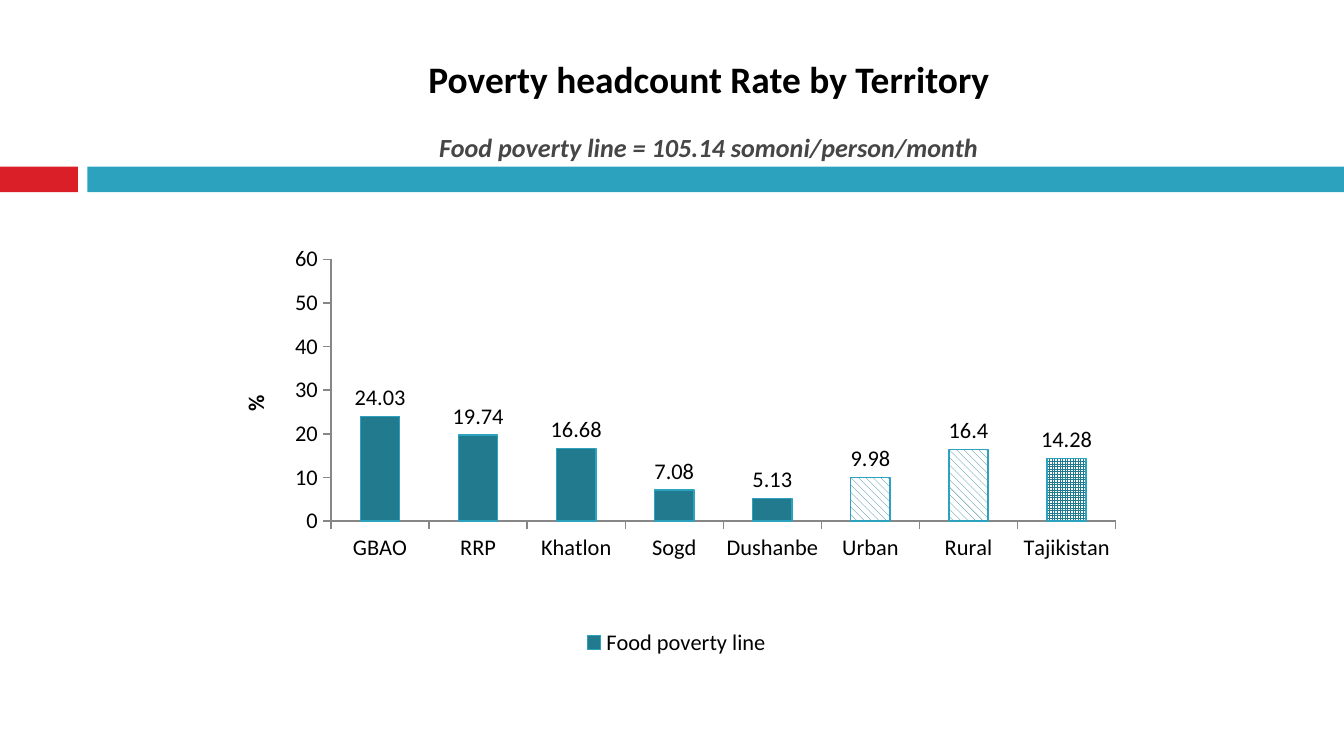
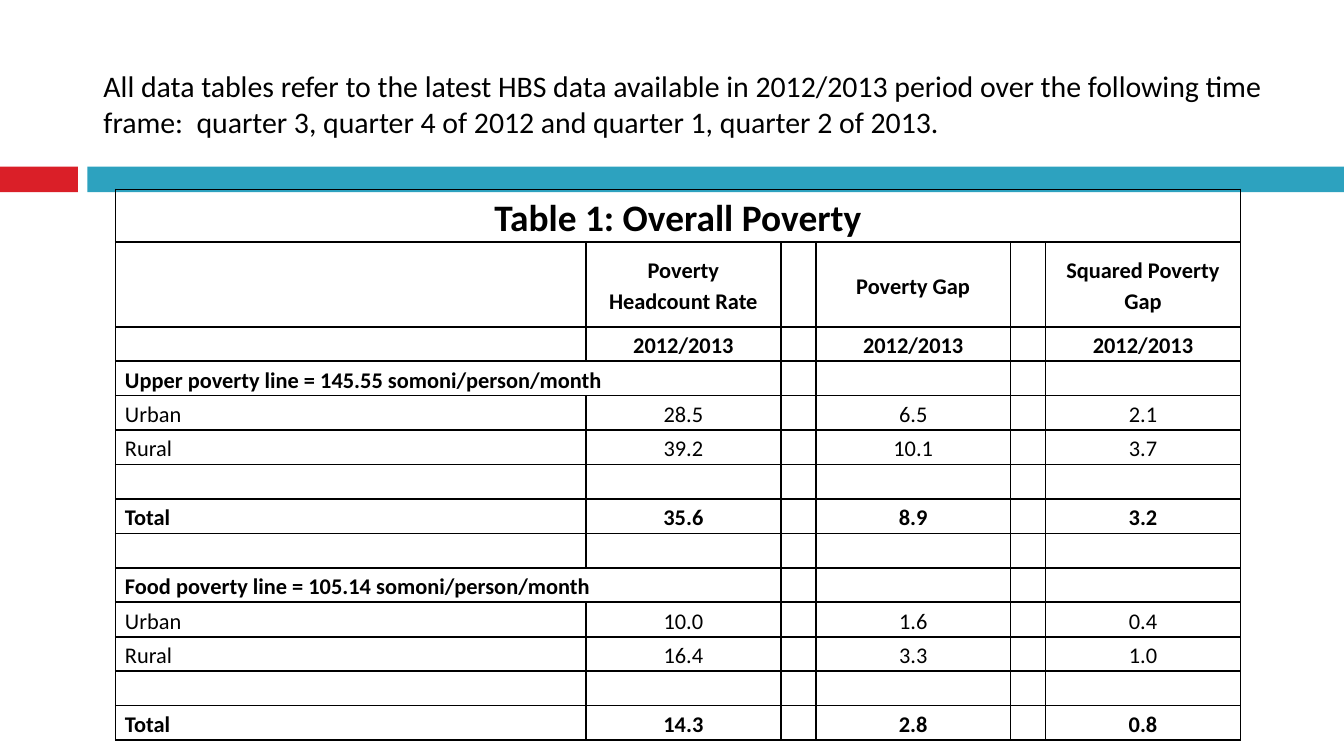
from dataclasses import dataclass
from lxml.etree import SubElement
from pptx import Presentation
from pptx.chart.data import CategoryChartData as Data
from pptx.dml.color import RGBColor as RGB
from pptx.enum.chart import XL_CHART_TYPE as Kind, XL_LABEL_POSITION as Spot
from pptx.enum.chart import XL_LEGEND_POSITION as Side, XL_TICK_MARK as Tick
from pptx.enum.dml import MSO_PATTERN as Hatch
from pptx.enum.shapes import MSO_SHAPE as Form
from pptx.enum.text import MSO_ANCHOR as Anchor, MSO_AUTO_SIZE as Fit, PP_ALIGN as Align
from pptx.oxml.ns import qn
from pptx.util import Inches, Pt


@dataclass(frozen=True)
class Theme:
    font: str = "Calibri"
    ink: RGB = RGB(0, 0, 0)
    paper: RGB = RGB(255, 255, 255)
    gray: RGB = RGB(0x46, 0x46, 0x46)
    axis: RGB = RGB(0x87, 0x87, 0x87)
    red: RGB = RGB(0xDA, 0x1F, 0x28)
    blue: RGB = RGB(0x2D, 0xA2, 0xBF)
    teal: RGB = RGB(0x22, 0x7A, 0x8F)
    head: int = 20
    note: int = 16
    sub: int = 14
    text: int = 12


def apply(item, **values):
    for name, value in values.items():
        setattr(item, name, value)


class Deck:
    def __init__(self, theme):
        self.theme = theme
        self.prs = Presentation()
        # Widescreen, 16 to 9
        wide = Inches(10)
        apply(self.prs, slide_width=wide, slide_height=wide * 9 // 16)
        self.slide = None

    def style(self, font, size, color=None, **more):
        apply(font, name=self.theme.font, size=Pt(size), **more)
        font.color.rgb = color or self.theme.ink

    def place(self, shape, box):
        names = ("left", "top", "width", "height")
        apply(shape, **dict(zip(names, map(Inches, box))))

    def page(self):
        self.slide = self.prs.slides.add_slide(self.prs.slide_layouts[5])
        self.band(0, 0.58, self.theme.red)
        self.band(0.65, 9.35, self.theme.blue)

    def band(self, left, width, color):
        box = map(Inches, (left, 1.24, width, 0.19))
        bar = self.slide.shapes.add_shape(Form.RECTANGLE, *box)
        bar.shadow.inherit = False
        bar.fill.solid()
        bar.fill.fore_color.rgb = color
        bar.line.fill.background()
        # Keep the band behind the title
        self.slide.shapes.title.element.addprevious(bar.element)

    def title(self, box, lines, align, foot=0.05):
        """Each line is (text, gap before in points, font values)."""
        shape = self.slide.shapes.title
        self.place(shape, box)
        frame = shape.text_frame
        apply(frame, word_wrap=True, auto_size=Fit.NONE,
              vertical_anchor=Anchor.BOTTOM, margin_bottom=Inches(foot))
        for i, (text, gap, look) in enumerate(lines):
            para = frame.add_paragraph() if i else frame.paragraphs[0]
            apply(para, alignment=align, space_before=Pt(gap))
            run = para.add_run()
            run.text = text
            self.style(run.font, **look)

    def chart(self, box, name, names, values, marks, plot):
        data = Data()
        data.categories = names
        data.add_series(name, values)
        chart = self.slide.shapes.add_chart(
            Kind.COLUMN_CLUSTERED, *map(Inches, box), data).chart
        apply(chart, has_title=False, has_legend=True)
        apply(chart.legend, position=Side.BOTTOM, include_in_layout=False)
        self.style(chart.font, self.theme.text)
        self.axes(chart)
        self.bars(chart.plots[0], marks)
        self.layout(chart, plot)

    def axes(self, chart):
        for axis in (chart.category_axis, chart.value_axis):
            apply(axis, major_tick_mark=Tick.OUTSIDE, has_major_gridlines=False)
            axis.format.line.color.rgb = self.theme.axis
            axis.format.line.width = Pt(0.75)
        value = chart.value_axis
        apply(value, minimum_scale=0, maximum_scale=60, major_unit=10)
        title = value.axis_title
        title.text_frame.text = "%"
        run = title.text_frame.paragraphs[0].runs[0]
        self.style(run.font, self.theme.text, bold=True)
        body = title.element.find(".//" + qn("a:bodyPr"))
        body.set("rot", "-5400000")
        body.set("vert", "horz")

    def bars(self, plot, marks):
        apply(plot, gap_width=150, vary_by_categories=False, has_data_labels=True)
        apply(plot.data_labels, show_value=True, position=Spot.OUTSIDE_END)
        self.style(plot.data_labels.font, self.theme.text)
        series = plot.series[0]
        series.format.fill.solid()
        series.format.fill.fore_color.rgb = self.theme.teal
        self.edge(series)
        for index, hatch in marks.items():
            point = series.points[index]
            fill = point.format.fill
            fill.patterned()
            fill.pattern = hatch
            fill.fore_color.rgb = self.theme.teal
            fill.back_color.rgb = self.theme.paper
            self.edge(point)

    def edge(self, item):
        item.format.line.color.rgb = self.theme.blue
        item.format.line.width = Pt(0.75)

    def layout(self, chart, plot):
        area = chart.element.find(".//" + qn("c:plotArea"))
        for old in area.findall(qn("c:layout")):
            area.remove(old)
        layout = SubElement(area, qn("c:layout"))
        area.insert(0, layout)
        manual = SubElement(layout, qn("c:manualLayout"))
        parts = [("layoutTarget", "inner"), ("xMode", "edge"), ("yMode", "edge")]
        for tag, value in parts + list(zip("xywh", plot)):
            SubElement(manual, qn("c:" + tag)).set("val", str(value))

    def table(self, box, widths, heights, rows, spans):
        table = self.slide.shapes.add_table(
            len(rows), len(widths), *map(Inches, box)).table
        apply(table, first_row=False, horz_banding=False)
        for col, width in zip(table.columns, widths):
            col.width = Inches(width)
        for row, height in zip(table.rows, heights):
            row.height = Inches(height)
        for r, row in enumerate(rows):
            for c in range(len(widths)):
                # Narrow gap columns sit between the value columns
                text = row[(c + 1) // 2] if c % 2 or c == 0 else ""
                self.cell(table.cell(r, c), text,
                          size=self.theme.text if r else self.theme.head,
                          bold=row[0] not in ("Urban", "Rural"),
                          align=Align.CENTER if c or r == 0 else Align.LEFT)
        for r, last in spans.items():
            table.cell(r, 0).merge(table.cell(r, last))

    def cell(self, cell, text, size, bold, align):
        apply(cell, vertical_anchor=Anchor.MIDDLE, margin_top=0, margin_bottom=0,
              margin_left=Inches(0.07), margin_right=Inches(0.07))
        para = cell.text_frame.paragraphs[0]
        apply(para, alignment=align, line_spacing=1.15)
        if text:
            run = para.add_run()
            run.text = text
            self.style(run.font, size, bold=bold)
        else:
            # Small type keeps blank rows low
            end = SubElement(para._p, qn("a:endParaRPr"))
            end.set("sz", str(self.theme.text * 100))
        props = cell._tc.get_or_add_tcPr()
        for side in "LRTB":
            line = SubElement(props, qn("a:ln" + side), w=str(Pt(1)))
            fill = SubElement(line, qn("a:solidFill"))
            SubElement(fill, qn("a:srgbClr"), val=str(self.theme.ink))
        cell.fill.background()


def main():
    theme = Theme()
    deck = Deck(theme)

    # Poverty rate chart
    deck.page()
    deck.title((0.55, 0.39, 9.45, 1.1), [
        ("Poverty headcount Rate by Territory", 0,
         dict(size=theme.head, bold=True)),
        ("Food poverty line = 105.14 somoni/person/month", 16,
         dict(size=theme.sub, color=theme.gray, bold=True, italic=True)),
    ], Align.CENTER, foot=0.28)
    rates = {"GBAO": 24.03, "RRP": 19.74, "Khatlon": 16.68, "Sogd": 7.08,
             "Dushanbe": 5.13, "Urban": 9.98, "Rural": 16.4, "Tajikistan": 14.28}
    stripe = Hatch.WIDE_DOWNWARD_DIAGONAL
    deck.chart((1.56, 1.56, 6.95, 3.36), "Food poverty line",
               list(rates), list(rates.values()),
               {5: stripe, 6: stripe, 7: Hatch.SMALL_GRID},
               plot=(0.13, 0.11, 0.84, 0.58))

    # Overall poverty table
    deck.page()
    deck.title((0.67, 0.13, 8.92, 0.96), [
        ("All data tables refer to the latest HBS data available in 2012/2013 "
         "period over the following time frame:  quarter 3, quarter 4 of 2012 "
         "and quarter 1, quarter 2 of 2013.", 0, dict(size=theme.note)),
    ], Align.LEFT)
    blank = [""] * 4
    rows = [
        ["Table 1: Overall Poverty", "", "", ""],
        ["", "Poverty Headcount Rate", "Poverty Gap", "Squared Poverty Gap"],
        [""] + ["2012/2013"] * 3,
        ["Upper poverty line = 145.55 somoni/person/month", "", "", ""],
        ["Urban", "28.5", "6.5", "2.1"],
        ["Rural", "39.2", "10.1", "3.7"],
        blank,
        ["Total", "35.6", "8.9", "3.2"],
        blank,
        ["Food poverty line = 105.14 somoni/person/month", "", "", ""],
        ["Urban", "10.0", "1.6", "0.4"],
        ["Rural", "16.4", "3.3", "1.0"],
        blank,
        ["Total", "14.3", "2.8", "0.8"],
    ]
    tall = [0.38, 0.63]
    rest = len(rows) - len(tall)
    heights = tall + [(4.09 - sum(tall)) / rest] * rest
    deck.table((0.86, 1.41, 8.36, 4.09), [3.5] + [1.45, 0.26] * 2 + [1.45],
               heights, rows, spans={0: 5, 3: 1, 9: 1})

    deck.prs.save("out.pptx")


if __name__ == "__main__":
    main()
